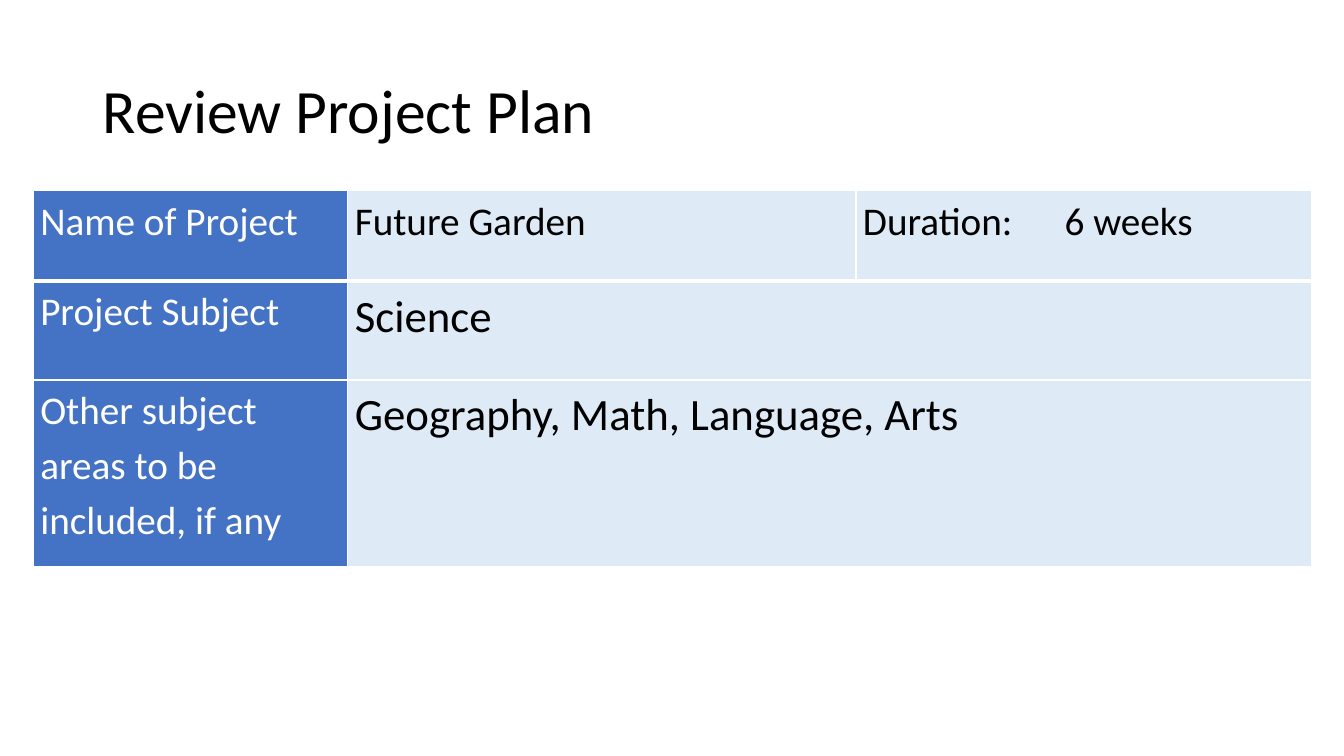
import pptx
import pptx.dml.color
import pptx.enum.text
import pptx.oxml.ns
import pptx.util
from lxml import etree

Inches = pptx.util.Inches
Pt = pptx.util.Pt

COLORS = {"text": "000000", "label": "4472C4", "value": "DEEBF7", "white": "FFFFFF"}
FONT = "Calibri"
COLUMN_WIDTHS = [3.12, 5.04, 4.52]
ROW_HEIGHTS = [0.9, 0.98, 1.85]
PLAN = [
    ["Name of Project", "Future Garden", "Duration: \t6 weeks"],
    ["Project Subject", "Science"],
    ["Other subject areas to be included, if any", "Geography, Math, Language, Arts"],
]


def rgb(name):
    return pptx.dml.color.RGBColor.from_string(COLORS[name])


def write(frame, text, size, color, line_spacing):
    paragraph = frame.paragraphs[0]
    paragraph.line_spacing = line_spacing
    run = paragraph.add_run()
    run.text = text
    for attribute, value in {"name": FONT, "size": Pt(size), "bold": False}.items():
        setattr(run.font, attribute, value)
    run.font.color.rgb = rgb(color)


def add_element(parent, tag, **attributes):
    return etree.SubElement(parent, pptx.oxml.ns.qn(tag), **attributes)


def add_borders(cell, bottom_width):
    properties = cell._tc.get_or_add_tcPr()
    for side, width in {"L": 1, "R": 1, "T": 1, "B": bottom_width}.items():
        line = add_element(properties, f"a:ln{side}", w=str(Pt(width)))
        fill = add_element(line, "a:solidFill")
        add_element(fill, "a:srgbClr", val=COLORS["white"])


def add_tab_stop(paragraph, position):
    tabs = add_element(paragraph._p.get_or_add_pPr(), "a:tabLst")
    add_element(tabs, "a:tab", pos=str(Inches(position)), algn="l")


def format_cell(cell, fill, bottom_width):
    margins = {"margin_left": 0.07, "margin_right": 0.07, "margin_top": 0, "margin_bottom": 0}
    for attribute, value in margins.items():
        setattr(cell, attribute, Inches(value))
    add_borders(cell, bottom_width)
    cell.fill.solid()
    cell.fill.fore_color.rgb = rgb(fill)


def add_title(slide, text):
    title = slide.shapes.add_textbox(Inches(0.92), Inches(0.4), Inches(11.5), Inches(1.45))
    title.text_frame.word_wrap = True
    title.text_frame.vertical_anchor = pptx.enum.text.MSO_ANCHOR.MIDDLE
    write(title.text_frame, text, 44, "text", 0.9)


def add_plan_table(slide):
    plan = slide.shapes.add_table(
        len(ROW_HEIGHTS), len(COLUMN_WIDTHS), Inches(0.33), Inches(1.89),
        Inches(sum(COLUMN_WIDTHS)), Inches(sum(ROW_HEIGHTS))).table
    plan.first_row = plan.horz_banding = False
    for column, width in zip(plan.columns, COLUMN_WIDTHS):
        column.width = Inches(width)
    for row, height in zip(plan.rows, ROW_HEIGHTS):
        row.height = Inches(height)

    for row_index, texts in enumerate(PLAN):
        for column_index in range(len(COLUMN_WIDTHS)):
            format_cell(plan.cell(row_index, column_index),
                        "value" if column_index else "label",
                        1 if row_index else 3)
        spans_two = len(texts) < len(COLUMN_WIDTHS)
        if spans_two:
            plan.cell(row_index, 1).merge(plan.cell(row_index, 2))
        for column_index, text in enumerate(texts):
            size = 32 if spans_two and column_index else 28
            color = "text" if column_index else "white"
            write(plan.cell(row_index, column_index).text_frame, text, size, color, 1.15)
    add_tab_stop(plan.cell(0, 2).text_frame.paragraphs[0], 0.97)


def main():
    presentation = pptx.Presentation()
    presentation.slide_width = Inches(13.33)
    presentation.slide_height = Inches(7.5)
    slide = presentation.slides.add_slide(presentation.slide_layouts[6])
    add_title(slide, "Review Project Plan")
    add_plan_table(slide)
    presentation.save("out.pptx")


if __name__ == "__main__":
    main()
